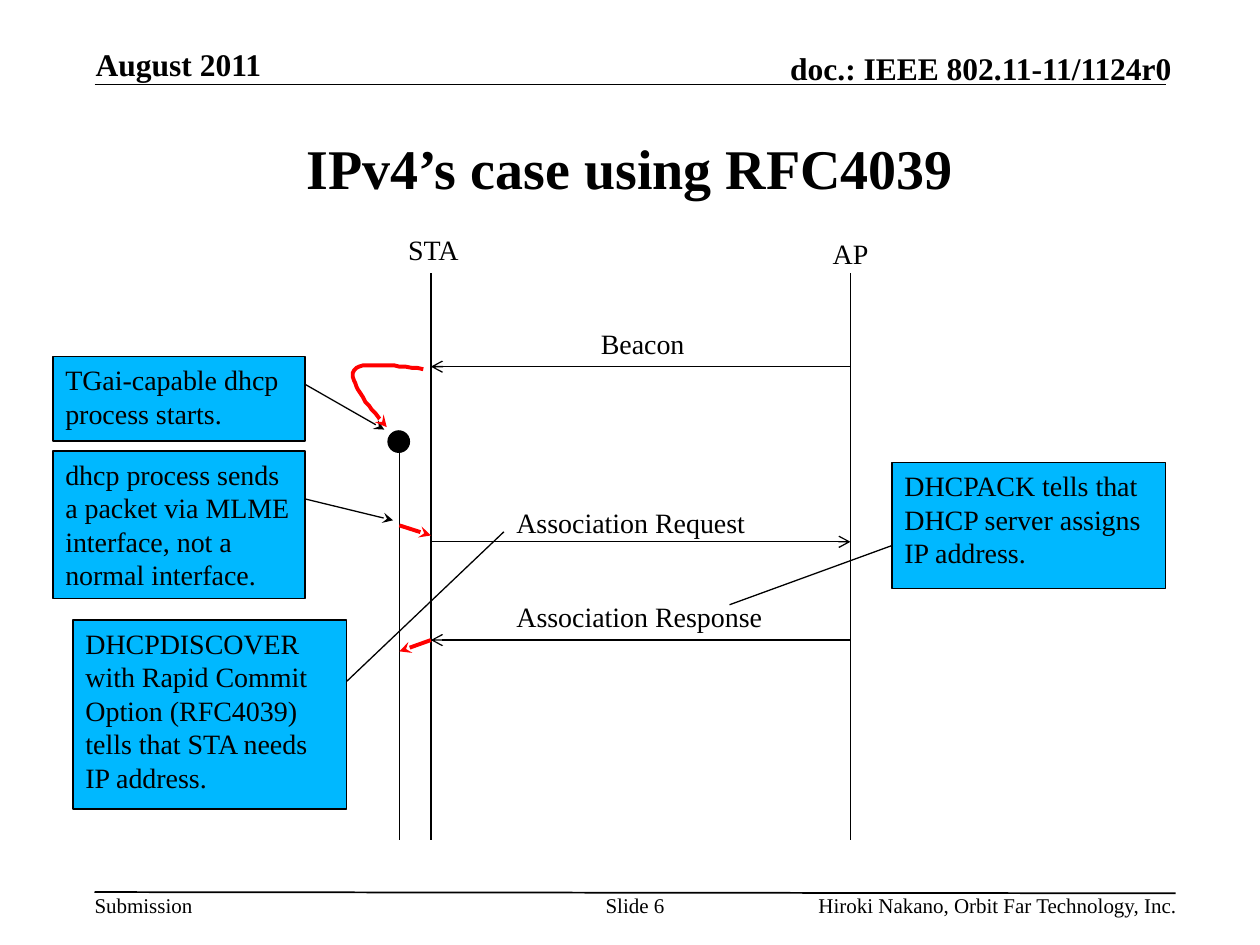
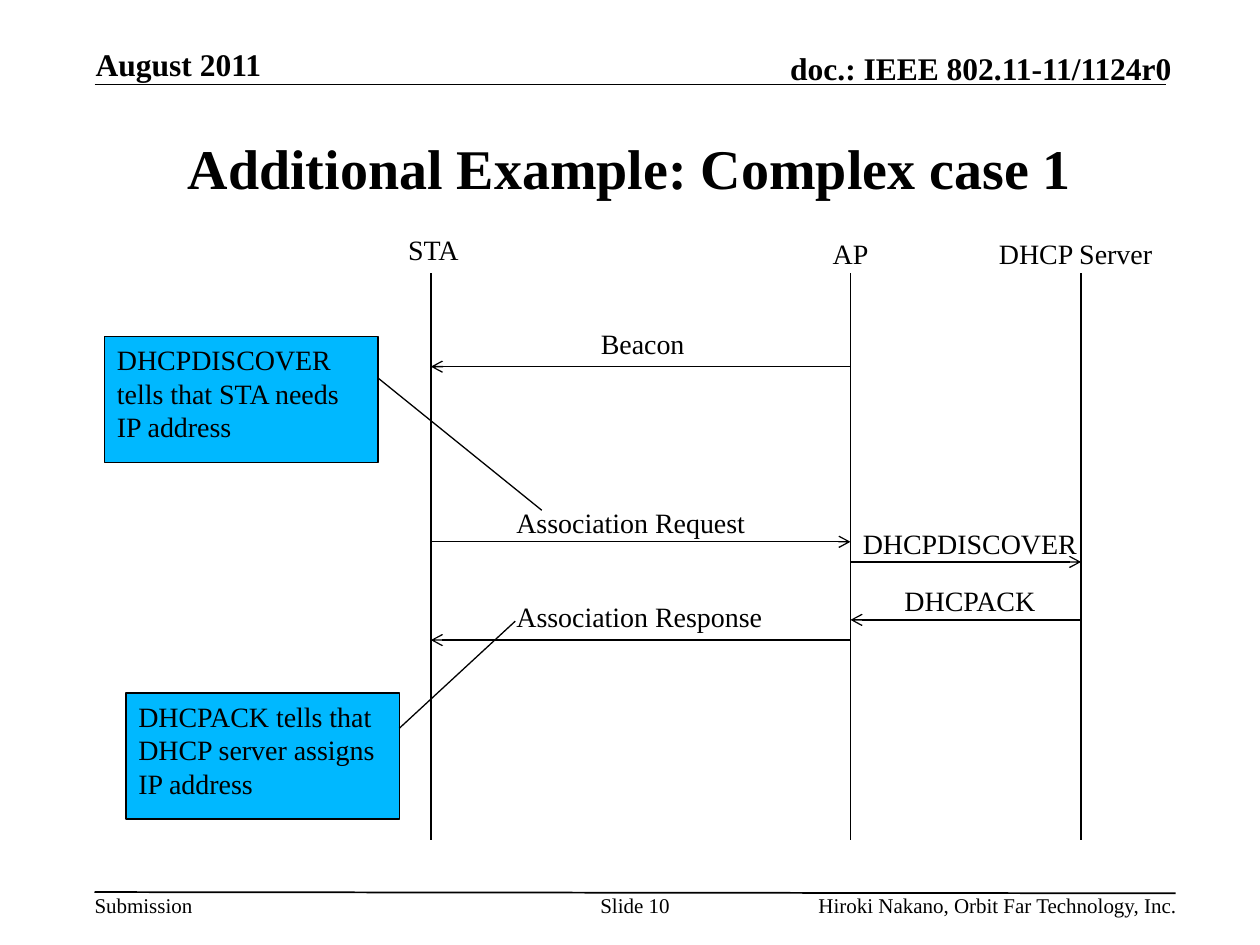
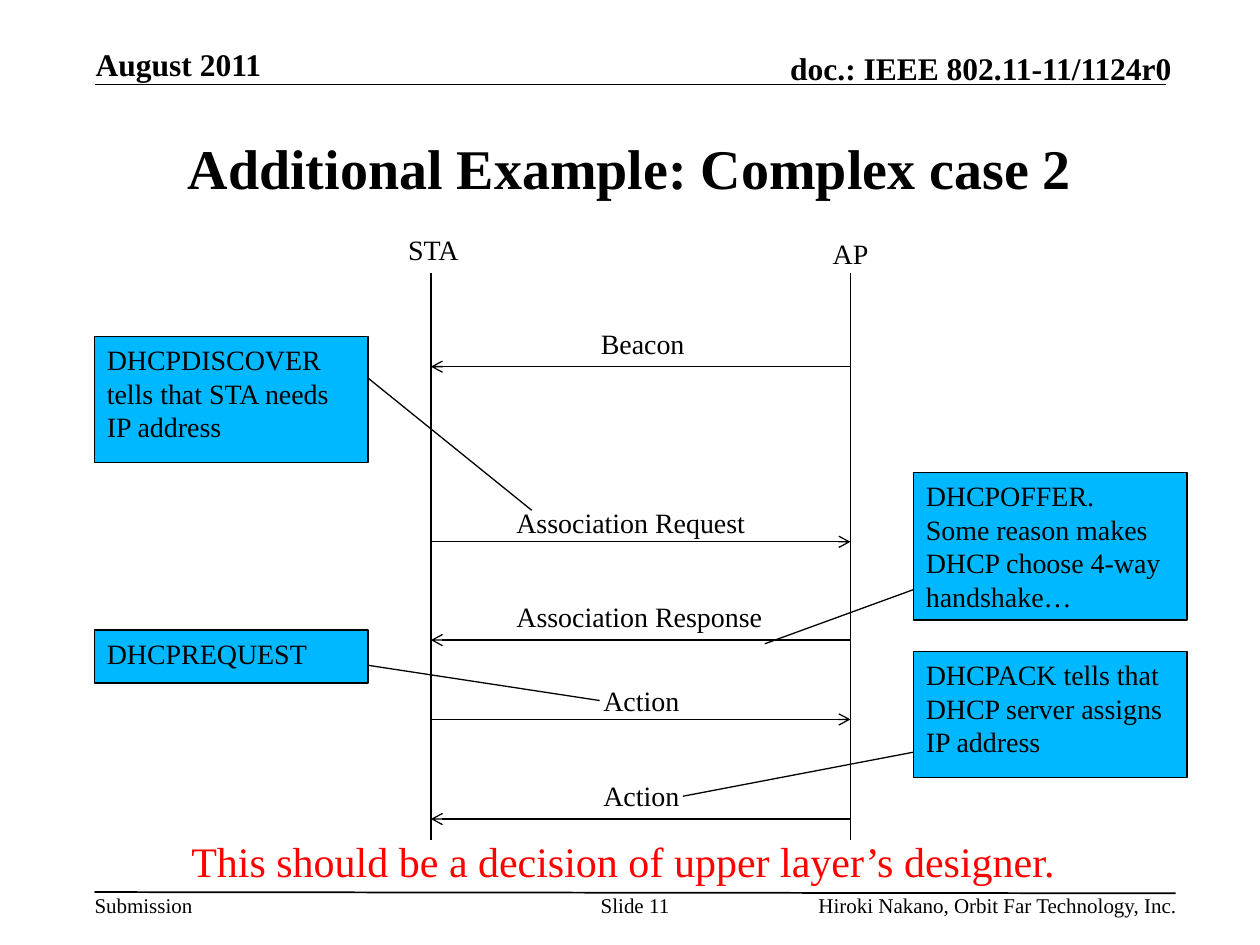
from lxml.etree import SubElement
from pptx import Presentation
from pptx.dml.color import RGBColor
from pptx.enum.shapes import MSO_CONNECTOR, MSO_SHAPE
from pptx.enum.text import MSO_ANCHOR, PP_ALIGN
from pptx.oxml.ns import qn
from pptx.util import Emu, Pt

EMU_PER_PX = 9144  # 100 px to the inch
FONT = "Times New Roman"
BLACK, RED, SKY, WHITE = "000000", "FF0000", "00B8FF", "FFFFFF"

STA_X, AP_X, SERVER_X = 342, 675, 858
LIFELINE_TOP, LIFELINE_BOTTOM = 217, 667


def px(*lengths):
    return [Emu(length * EMU_PER_PX) for length in lengths]


def color(hex_string):
    return RGBColor.from_string(hex_string)


def cubic_points(start, control_1, control_2, end, steps=16):
    """Points along a cubic Bézier curve, without its start."""
    points = []
    for step in range(1, steps + 1):
        t = step / steps
        weights = ((1 - t) ** 3, 3 * t * (1 - t) ** 2, 3 * t * t * (1 - t), t ** 3)
        points.append(tuple(
            sum(weight * value for weight, value in zip(weights, values))
            for values in zip(start, control_1, control_2, end)))
    return points


class SequenceDeck:
    """Sequence-diagram slides that share one header, title and footer."""

    def __init__(self):
        self.presentation = Presentation()
        self.presentation.slide_width, self.presentation.slide_height = px(1000, 750)
        self.slide = None

    def new_slide(self, title, number):
        blank = self.presentation.slide_layouts[6]
        self.slide = self.presentation.slides.add_slide(blank)
        fill = self.slide.background.fill
        fill.solid()
        fill.fore_color.rgb = color(WHITE)

        self.line((75, 67), (925, 67), width=1)
        self.line((75, 708), (933, 709), width=1)
        header = dict(size=18, bold=True, anchor=MSO_ANCHOR.BOTTOM, inset=False)
        self.text("August 2011", 76, 36, 205, 30, **header)
        self.text("doc.: IEEE 802.11-11/1124r0", 547, 39, 383, 30,
                  align=PP_ALIGN.RIGHT, **header)
        footer = dict(size=12, inset=False)
        self.text("Submission", 75, 708, 78, 20, **footer)
        self.text(f"Slide {number}", 475, 708, 58, 40, align=PP_ALIGN.CENTER, **footer)
        self.text("Hiroki Nakano, Orbit Far Technology, Inc.", 586, 708, 348, 20,
                  align=PP_ALIGN.RIGHT, **footer)
        self.text(title, 75, 75, 850, 116, size=32, bold=True,
                  align=PP_ALIGN.CENTER, anchor=MSO_ANCHOR.MIDDLE)

    def set_text(self, shape, text, size, ink=BLACK, bold=False, align=PP_ALIGN.LEFT):
        shape.text_frame.text = text
        for paragraph in shape.text_frame.paragraphs:
            paragraph.alignment = align
            for run in paragraph.runs:
                run.font.name = FONT
                run.font.size = Pt(size)
                run.font.bold = bold
                run.font.color.rgb = color(ink)

    def text(self, text, left, top, width, height, size=16, anchor=MSO_ANCHOR.TOP,
             inset=True, **style):
        box = self.slide.shapes.add_textbox(*px(left, top, width, height))
        frame = box.text_frame
        frame.word_wrap = False
        frame.vertical_anchor = anchor
        if not inset:
            frame.margin_left = frame.margin_right = 0
            frame.margin_top = frame.margin_bottom = 0
        self.set_text(box, text, size, **style)

    def stroke(self, shape, ink=BLACK, width=0.75, arrowhead=None):
        shape.line.color.rgb = color(ink)
        shape.line.width = Pt(width)
        if arrowhead:
            outline = shape._element.spPr.find(qn("a:ln"))
            SubElement(outline, qn("a:tailEnd"), type=arrowhead)

    def line(self, start, end, **stroke):
        connector = self.slide.shapes.add_connector(
            MSO_CONNECTOR.STRAIGHT, *px(*start, *end))
        self.stroke(connector, **stroke)
        SubElement(connector._element.spPr, qn("a:effectLst"))

    def signal(self, start, end):
        """Red arrow for traffic inside the station."""
        self.line(start, end, ink=RED, width=2.25, arrowhead="stealth")

    def curved_signal(self, start, *segments):
        points = []
        corner = start
        for segment in segments:
            points += cubic_points(corner, *segment)
            corner = segment[-1]
        builder = self.slide.shapes.build_freeform(*start, scale=EMU_PER_PX)
        builder.add_line_segments(points, close=False)
        curve = builder.convert_to_shape()
        curve.shadow.inherit = False
        curve.fill.background()
        self.stroke(curve, RED, 2.25, "stealth")

    def dot(self, left, top, diameter):
        shape = self.slide.shapes.add_shape(
            MSO_SHAPE.OVAL, *px(left, top, diameter, diameter))
        self.fill(shape, BLACK)
        self.stroke(shape)

    def fill(self, shape, hex_string):
        shape.shadow.inherit = False
        shape.fill.solid()
        shape.fill.fore_color.rgb = color(hex_string)

    def callout(self, text, left, top, width, height, leader_y, target, arrowhead=None):
        """Box whose leader leaves the side nearer the target at leader_y."""
        shape = self.slide.shapes.add_shape(
            MSO_SHAPE.LINE_CALLOUT_1, *px(left, top, width, height))
        target_x, target_y = target
        shape.adjustments[0] = (leader_y - top) / height
        shape.adjustments[1] = 1 if target_x > left else 0
        shape.adjustments[2] = (target_y - top) / height
        shape.adjustments[3] = (target_x - left) / width
        self.fill(shape, SKY)
        self.stroke(shape, arrowhead=arrowhead)
        shape.text_frame.word_wrap = True
        shape.text_frame.vertical_anchor = MSO_ANCHOR.TOP
        self.set_text(shape, text, 16)

    def lifeline(self, x, top=LIFELINE_TOP):
        self.line((x, top), (x, LIFELINE_BOTTOM))

    def participant(self, name, x, label_left, label_top, label_width):
        self.lifeline(x)
        self.text(name, label_left, label_top, label_width, 37)

    def message(self, name, sender_x, receiver_x, y, label_left, label_top, label_width):
        self.line((sender_x, y), (receiver_x, y), arrowhead="arrow")
        self.text(name, label_left, label_top, label_width, 37)

    def association(self):
        """The station and access point exchange found on every slide."""
        self.participant("STA", STA_X, 314, 180, 61)
        self.participant("AP", AP_X, 651, 183, 49)
        self.message("Beacon", AP_X, STA_X, 291, 467, 254, 87)
        self.message("Association Request", STA_X, AP_X, 430, 400, 396, 204)
        self.message("Association Response", AP_X, STA_X, 508, 400, 471, 218)


def rapid_commit_slide(deck):
    process_x = 317
    deck.new_slide("IPv4’s case using RFC4039", 6)
    deck.association()
    deck.callout("DHCPDISCOVER with Rapid Commit Option (RFC4039) tells that STA needs "
                 "IP address.", 58, 492, 217, 150, 541, (400, 422))
    deck.callout("DHCPACK tells that DHCP server assigns IP address.",
                 708, 367, 217, 100, 433, (579, 480))
    deck.lifeline(process_x, top=350)
    deck.callout("TGai-capable dhcp process starts.",
                 42, 283, 200, 67, 305, (305, 341), "stealth")
    deck.dot(308, 342, 17)
    deck.curved_signal((336, 293),
                       ((311, 290), (285, 287), (281, 294)),
                       ((276, 302), (291, 320), (307, 339)))
    deck.signal((process_x, 417), (STA_X, 425))
    deck.callout("dhcp process sends a packet via MLME interface, not a normal interface.",
                 42, 358, 200, 117, 396, (312, 413), "stealth")
    deck.signal((STA_X, 508), (process_x, 517))


def separate_server_slide(deck):
    deck.new_slide("Additional Example: Complex case 1", 10)
    deck.association()
    deck.callout("DHCPDISCOVER tells that STA needs IP address",
                 83, 267, 217, 100, 300, (430, 405))
    deck.callout("DHCPACK tells that DHCP server assigns IP address",
                 100, 550, 217, 100, 578, (409, 493))
    deck.participant("DHCP Server", SERVER_X, 783, 183, 144)
    deck.message("DHCPDISCOVER", AP_X, SERVER_X, 446, 675, 413, 193)
    deck.message("DHCPACK", SERVER_X, AP_X, 492, 708, 458, 125)


def four_way_slide(deck):
    deck.new_slide("Additional Example: Complex case 2", 11)
    deck.association()
    deck.callout("DHCPDISCOVER tells that STA needs IP address",
                 75, 267, 217, 100, 300, (422, 405))
    deck.callout("DHCPACK tells that DHCP server assigns IP address",
                 725, 517, 217, 100, 597, (542, 632))
    deck.message("Action", STA_X, AP_X, 571, 469, 538, 81)
    deck.message("Action", AP_X, STA_X, 650, 469, 613, 81)
    deck.callout("DHCPOFFER.\nSome reason makes DHCP choose 4-way handshake…",
                 725, 375, 217, 117, 468, (607, 511))
    deck.callout("DHCPREQUEST", 75, 500, 217, 42, 528, (476, 556))
    deck.text("This should be a decision of upper layer’s designer.",
              142, 658, 717, 50, size=24, ink=RED)


def main():
    deck = SequenceDeck()
    rapid_commit_slide(deck)
    separate_server_slide(deck)
    four_way_slide(deck)
    deck.presentation.save("out.pptx")


if __name__ == "__main__":
    main()
